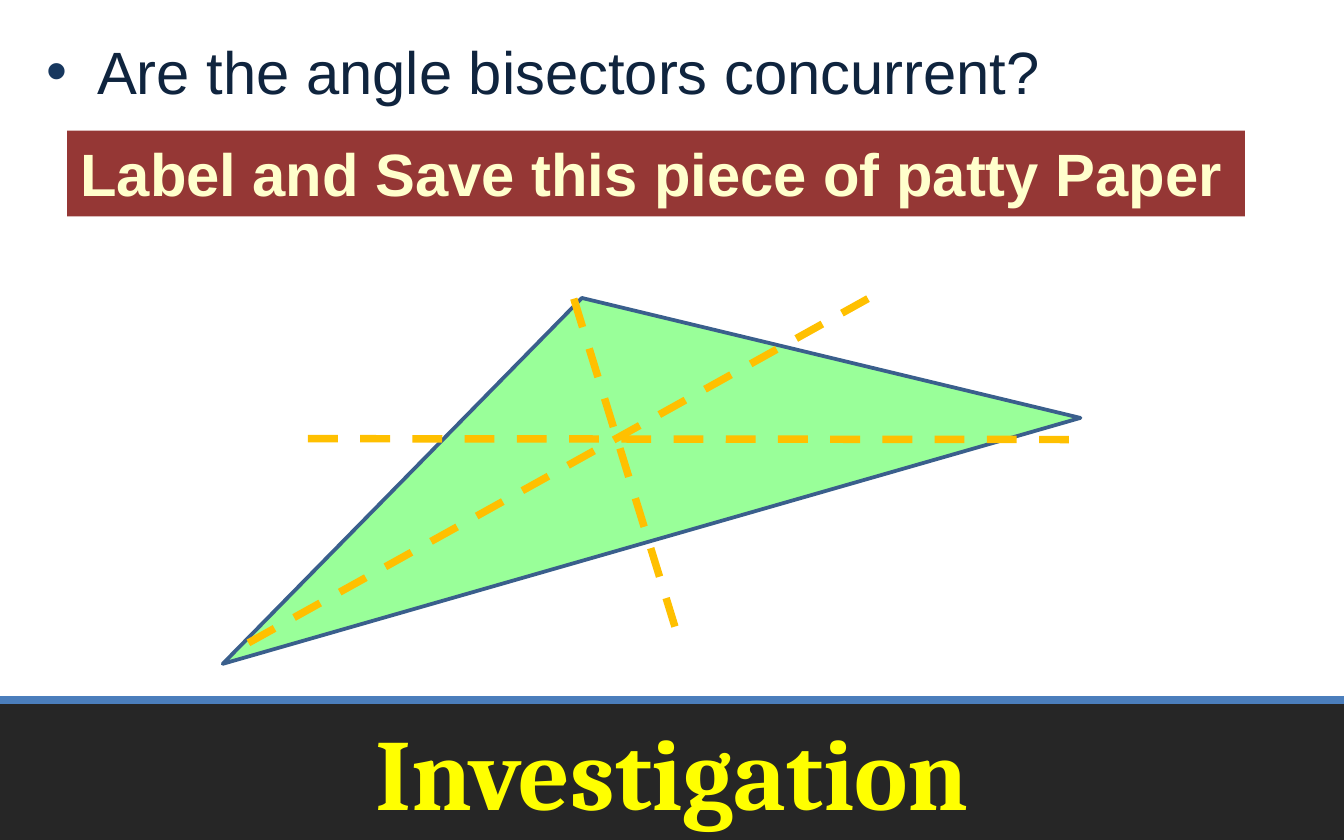
from lxml import etree
from pptx import Presentation
from pptx.dml.color import RGBColor
from pptx.enum.dml import MSO_LINE
from pptx.enum.shapes import MSO_CONNECTOR, MSO_SHAPE
from pptx.enum.text import MSO_ANCHOR, PP_ALIGN
from pptx.oxml.ns import qn
from pptx.util import Pt

DASH = MSO_LINE.DASH
STRAIGHT = MSO_CONNECTOR.STRAIGHT
RECTANGLE, TRIANGLE = MSO_SHAPE.RECTANGLE, MSO_SHAPE.ISOSCELES_TRIANGLE
LEFT, CENTER = PP_ALIGN.LEFT, PP_ALIGN.CENTER
TOP, MIDDLE = MSO_ANCHOR.TOP, MSO_ANCHOR.MIDDLE

# Content, all lengths in points
WIDTH, HEIGHT = 720, 450
BAND_TOP = 375
MARGIN = 18
INDENT = 27
TITLE = "Investigation"
QUESTION = "Are the angle bisectors concurrent?"
REMINDER = "Label and Save this piece of patty Paper"
TRIANGLE_BOX = (91.4, 157, 478, 135.4)
TRIANGLE_ROTATION = 344
BISECTORS = [  # start x, start y, end x, end y
    (307.4, 160, 362.9, 340),
    (465, 160, 123, 350),
    (165, 235, 582.5, 235.5),
]


def color(hex_code):
    return RGBColor.from_string(hex_code)


def add_filled(shapes, kind, box, fill):
    shape = shapes.add_shape(kind, *map(Pt, box))
    shape.shadow.inherit = False
    shape.fill.solid()
    shape.fill.fore_color.rgb = color(fill)
    shape.line.fill.background()
    return shape


def style_line(line, hex_code, width):
    line.color.rgb = color(hex_code)
    line.width = Pt(width)


def add_line(shapes, ends, hex_code, width):
    connector = shapes.add_connector(STRAIGHT, *map(Pt, ends))
    style_line(connector.line, hex_code, width)
    etree.SubElement(connector._element.spPr, qn("a:effectLst"))
    return connector


def write(shape, text, size, font, hex_code, bold=False, align=LEFT, anchor=TOP, wrap=True):
    frame = shape.text_frame
    frame.text = text
    frame.word_wrap = wrap
    frame.vertical_anchor = anchor
    paragraph = frame.paragraphs[0]
    paragraph.alignment = align
    paragraph.font.size = Pt(size)
    paragraph.font.name = font
    paragraph.font.bold = bold
    paragraph.font.color.rgb = color(hex_code)
    return paragraph


def add_bullet(paragraph, hex_code):
    properties = paragraph._p.get_or_add_pPr()
    properties.set("marL", str(Pt(INDENT)))
    properties.set("indent", str(-Pt(INDENT)))
    bullet_color = etree.SubElement(properties, qn("a:buClr"))
    etree.SubElement(bullet_color, qn("a:srgbClr"), val=hex_code)
    etree.SubElement(properties, qn("a:buFont"), typeface="Arial")
    etree.SubElement(properties, qn("a:buChar"), char="•")


presentation = Presentation()
presentation.slide_width, presentation.slide_height = Pt(WIDTH), Pt(HEIGHT)
slide = presentation.slides.add_slide(presentation.slide_layouts[5])
shapes = slide.shapes

# Title on the dark band at the foot
title = shapes.title
band_height = HEIGHT - BAND_TOP
band = add_filled(shapes, RECTANGLE, (0, BAND_TOP, WIDTH, band_height), "262626")
rule = add_line(shapes, (0, BAND_TOP, WIDTH, BAND_TOP), "4B7EBC", 4)
for backdrop in (band, rule):
    title._element.addprevious(backdrop._element)
title.left, title.top = Pt(MARGIN), Pt(BAND_TOP)
title.width, title.height = Pt(WIDTH - 2 * MARGIN), Pt(band_height)
write(title, TITLE, 54, "Cambria", "FFFF00", bold=True, align=CENTER, anchor=MIDDLE)

# Question
question = shapes.add_textbox(Pt(MARGIN), Pt(15), Pt(WIDTH - 2 * MARGIN), Pt(355))
paragraph = write(question, QUESTION, 32, "Arial", "0F243E")
paragraph.space_before = Pt(4)
add_bullet(paragraph, "17375E")

# Triangle and its angle bisectors
triangle = add_filled(shapes, TRIANGLE, TRIANGLE_BOX, "99FF99")
triangle.rotation = TRIANGLE_ROTATION
style_line(triangle.line, "3A5F8C", 2)
for ends in BISECTORS:
    add_line(shapes, ends, "FFC000", 4).line.dash_style = DASH

# Reminder
reminder = add_filled(shapes, RECTANGLE, (36, 70, 631, 46), "953735")
write(reminder, REMINDER, 32, "Arial", "FFFFCC", bold=True, wrap=False)

presentation.save("out.pptx")
